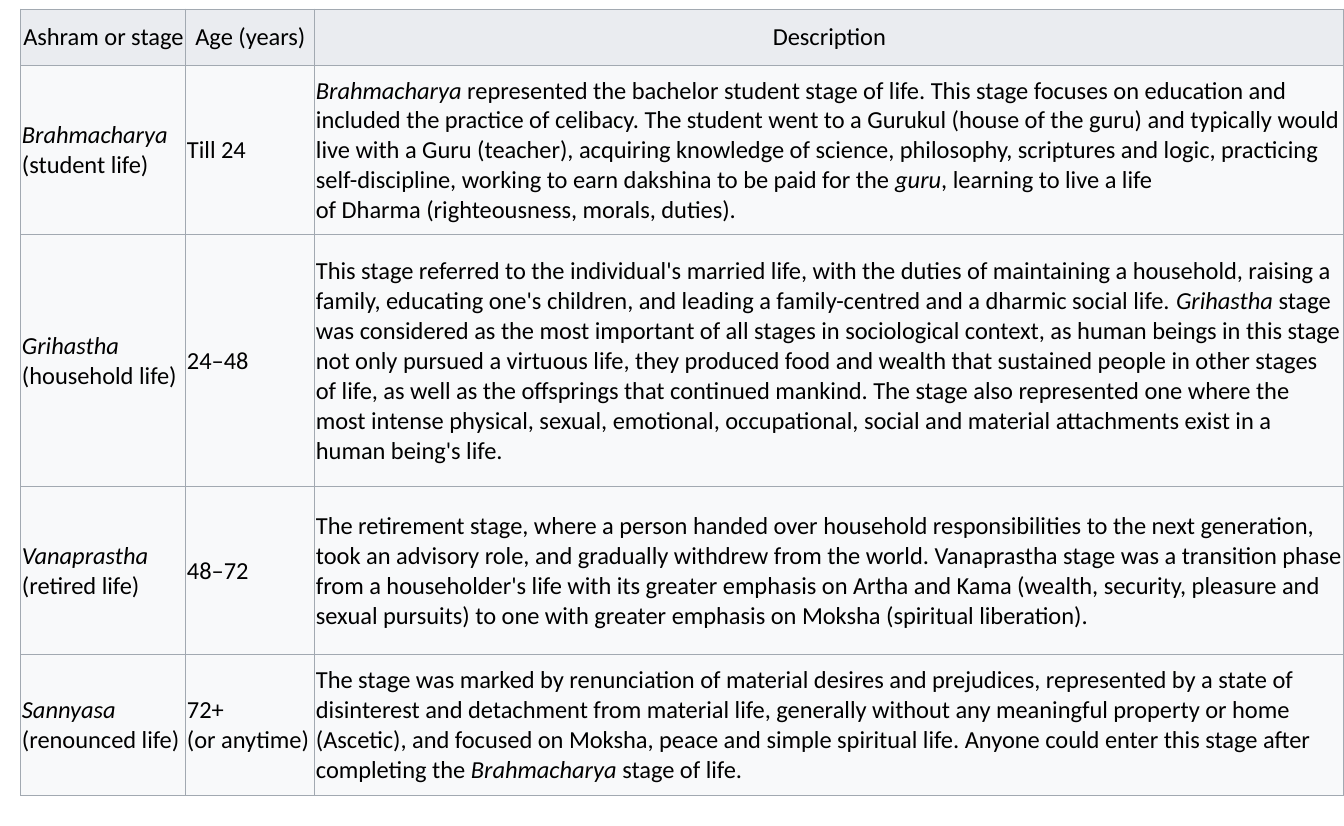
from copy import deepcopy

from lxml.etree import SubElement
from pptx import Presentation
from pptx.dml.color import RGBColor
from pptx.enum.text import MSO_ANCHOR as Anchor, PP_ALIGN as Align
from pptx.oxml.ns import qn
from pptx.util import Pt

HEADINGS = ("Ashram or stage", "Age (years)", "Description")
STAGES = [
    ("*Brahmacharya*\n(student life)", "Till 24",
     "*Brahmacharya*~represented the bachelor student stage of life. This stage focuses on "
     "education and included the practice of~celibacy.~The student went to a~Gurukul~(house of "
     "the guru) and typically would live with a~Guru~(teacher), acquiring knowledge of science, "
     "philosophy, scriptures and logic, practicing self-discipline, working to earn~dakshina~to "
     "be paid for the~*guru*, learning to live a life of~Dharma~(righteousness, morals, duties)."),
    ("*Grihastha*\n(household life)", "24–48",
     "This stage referred to the individual's married life, with the duties of maintaining a "
     "household, raising a family, educating one's children, and leading a family-centred and "
     "a~dharmic~social life. *Grihastha*~stage was considered as the most important of all stages "
     "in sociological context, as human beings in this stage not only pursued a virtuous life, "
     "they produced food and wealth that sustained people in other stages of life, as well as the "
     "offsprings that continued mankind.~The stage also represented one where the most intense "
     "physical, sexual, emotional, occupational, social and material attachments exist in a human "
     "being's life."),
    ("*Vanaprastha*\n(retired life)", "48–72",
     "The retirement stage, where a person handed over household responsibilities to the next "
     "generation, took an advisory role, and gradually withdrew from the world.~Vanaprastha stage "
     "was a transition phase from a householder's life with its greater emphasis on~Artha~and~Kama~"
     "(wealth, security, pleasure and sexual pursuits) to one with greater emphasis on~Moksha~"
     "(spiritual liberation)."),
    ("*Sannyasa*\n(renounced life)", "72+\n(or anytime)",
     "The stage was marked by renunciation of material desires and prejudices, represented by a "
     "state of disinterest and detachment from material life, generally without any meaningful "
     "property or home (Ascetic), and focused on~Moksha, peace and simple spiritual life.~Anyone "
     "could enter this stage after completing the~*Brahmacharya*~stage of life."),
]
SCALE = 8305
SLIDE_SIZE = (1344, 826)
LEFT, TOP = 21, 9
COLUMN_WIDTHS = (165, 129, 1029)
ROW_HEIGHTS = (57, 169, 252, 168, 141)
FONT = {"name": "Calibri", "size": Pt(16)}
INSET = 1
CELL_FORMAT = {"vertical_anchor": Anchor.MIDDLE}
CELL_FORMAT.update({f"margin_{side}": INSET * SCALE for side in ("left", "right", "top", "bottom")})
HEADING_FILL, STAGE_FILL, BORDER, INK = "EAECF0", "F8F9FA", "A2A9B1", "000000"


def px(length):
    return length * SCALE


def colour(value):
    return RGBColor.from_string(value)


def set_all(target, values):
    for attribute, value in values.items():
        setattr(target, attribute, value)


def write(paragraph, text):
    """Write text where * switches italics and ~ is a non-breaking space."""
    for line_index, line in enumerate(text.replace("~", chr(160)).split("\n")):
        if line_index:
            paragraph.add_line_break()
        for part_index, part in enumerate(line.split("*")):
            if part:
                run = paragraph.add_run()
                run.text = part
                set_all(run.font, FONT | {"italic": part_index % 2 == 1})
                run.font.color.rgb = colour(INK)
    for line_break in paragraph._p.findall(qn("a:br")):
        line_break.append(deepcopy(run._r.rPr))


def add_borders(cell):
    properties = cell._tc.get_or_add_tcPr()
    for side in "LRTB":
        edge = SubElement(properties, qn(f"a:ln{side}"), w=str(Pt(0.75)))
        fill = SubElement(edge, qn("a:solidFill"))
        SubElement(fill, qn("a:srgbClr"), val=BORDER)


def fill_cell(cell, text, fill, align):
    set_all(cell, CELL_FORMAT)
    add_borders(cell)
    cell.fill.solid()
    cell.fill.fore_color.rgb = colour(fill)
    paragraph = cell.text_frame.paragraphs[0]
    paragraph.alignment = align
    write(paragraph, text)


def main():
    deck = Presentation()
    deck.slide_width, deck.slide_height = map(px, SLIDE_SIZE)
    slide = deck.slides.add_slide(deck.slide_layouts[6])
    stages = slide.shapes.add_table(
        len(ROW_HEIGHTS), len(COLUMN_WIDTHS), px(LEFT), px(TOP),
        px(sum(COLUMN_WIDTHS)), px(sum(ROW_HEIGHTS))).table
    for column, width in zip(stages.columns, COLUMN_WIDTHS):
        column.width = px(width)
    for row_index, (height, texts) in enumerate(zip(ROW_HEIGHTS, [HEADINGS, *STAGES])):
        row = stages.rows[row_index]
        row.height = px(height)
        fill, align = (STAGE_FILL, Align.LEFT) if row_index else (HEADING_FILL, Align.CENTER)
        for cell, text in zip(row.cells, texts):
            fill_cell(cell, text, fill, align)
    deck.save("out.pptx")


if __name__ == "__main__":
    main()
